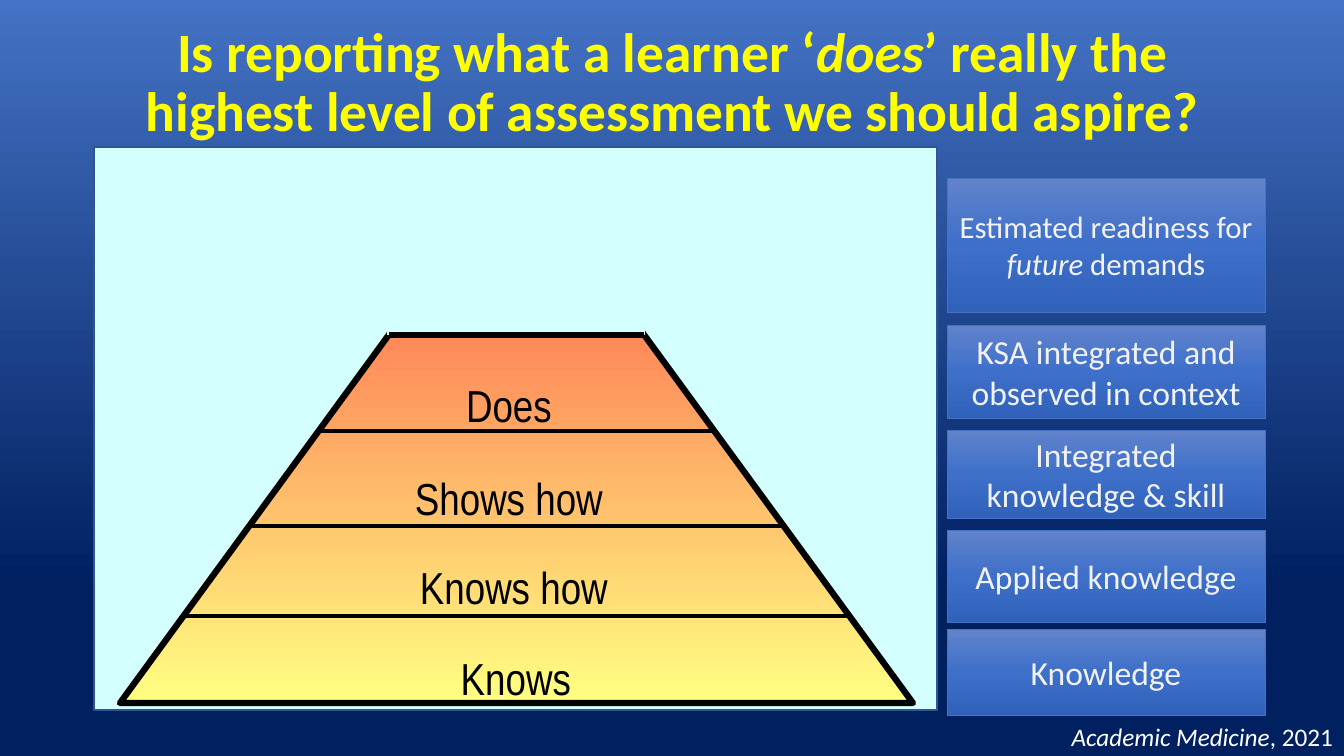
from lxml import etree
from pptx import Presentation
from pptx.dml.color import RGBColor
from pptx.enum.shapes import MSO_CONNECTOR, MSO_SHAPE
from pptx.enum.text import MSO_ANCHOR, MSO_AUTO_SIZE, PP_ALIGN
from pptx.oxml.ns import qn
from pptx.util import Pt

PX = 914400 / 100.8
RECTANGLE, TRIANGLE = MSO_SHAPE.RECTANGLE, MSO_SHAPE.ISOSCELES_TRIANGLE
STRAIGHT = MSO_CONNECTOR.STRAIGHT
TOP, MIDDLE = MSO_ANCHOR.TOP, MSO_ANCHOR.MIDDLE
CENTER, RIGHT = PP_ALIGN.CENTER, PP_ALIGN.RIGHT
NO_AUTOFIT = MSO_AUTO_SIZE.NONE

BLACK = RGBColor(0x00, 0x00, 0x00)
WHITE = RGBColor(0xFF, 0xFF, 0xFF)
OFF_WHITE = RGBColor(0xF2, 0xF2, 0xF2)
YELLOW = RGBColor(0xFF, 0xFF, 0x00)
PALE_CYAN = RGBColor(0xD3, 0xFF, 0xFF)
PANEL_EDGE = RGBColor(0x32, 0x54, 0x91)
BLUE = RGBColor(0x44, 0x72, 0xC4)
NAVY = RGBColor(0x00, 0x20, 0x60)
RED = RGBColor(0xFE, 0x50, 0x47)
LEMON = RGBColor(0xFF, 0xFF, 0x81)

BACKGROUND_STOPS = [(0, BLUE), (78, NAVY)]
PYRAMID_STOPS = [(0, RED), (100, LEMON)]
CARD_STOPS = [(0, RGBColor(0x61, 0x83, 0xCB)), (50, RGBColor(0x3E, 0x70, 0xCA)),
              (100, RGBColor(0x30, 0x62, 0xBB))]

PANEL = (94, 147, 843, 563)
PYRAMID = (120, 160, 793, 543)
CUT_Y = 335
LEVEL_LINES = [431, 526, 616]
# text, centre x, top
LEVELS = [("Does", 509, 370), ("Shows how", 509, 463),
          ("Knows how", 514, 552), ("Knows", 516, 643)]
CARD_LEFT, CARD_WIDTH = 947, 318
# top, height, size, paragraphs of (text, italic) spans
CARDS = [
    (178, 134, 22, [[("Estimated readiness for", False)],
                    [("future ", True), ("demands", False)]]),
    (325, 93, 24, [[("KSA integrated and observed in context", False)]]),
    (430, 88, 24, [[("Integrated", False)], [("knowledge & skill", False)]]),
    (530, 92, 24, [[("Applied knowledge", False)]]),
    (629, 86, 24, [[("Knowledge", False)]]),
]
TITLE = [[("Is reporting what a learner ‘", False), ("does", True),
          ("’ really the highest level of assessment we should aspire?", False)]]
SOURCE = [[("Academic Medicine", True), (", 2021", False)]]


def emu(*lengths):
    return [round(length * PX) for length in lengths]


def fill_gradient(fill, element, stops):
    """Fill from top to bottom; element holds the fill's XML."""
    fill.gradient()
    fill.gradient_angle = 270
    stop_list = next(element.iter(qn("a:gsLst")))
    stop_list.clear()
    for percent, color in stops:
        stop = etree.SubElement(stop_list, qn("a:gs"), pos=str(percent * 1000))
        etree.SubElement(stop, qn("a:srgbClr"), val=str(color))


def add_block(page, kind, place, fill, edge=None, weight=1):
    """Fill is one colour or a list of gradient stops."""
    block = page.shapes.add_shape(kind, *emu(*place))
    block.shadow.inherit = False
    if isinstance(fill, list):
        fill_gradient(block.fill, block.element, fill)
    else:
        block.fill.solid()
        block.fill.fore_color.rgb = fill
    if edge is None:
        block.line.fill.background()
    else:
        block.line.color.rgb = edge
        block.line.width = Pt(weight)
    return block


def add_level_line(page, y, weight):
    """Draw a horizontal line between the two sides of the pyramid."""
    left, top, width, height = PYRAMID
    middle = left + width / 2
    half = (y - top) / height * width / 2
    line = page.shapes.add_connector(STRAIGHT, *emu(middle - half, y, middle + half, y))
    line.line.color.rgb = BLACK
    line.line.width = Pt(weight)
    etree.SubElement(line.element.spPr, qn("a:effectLst"))


def write(frame, paragraphs, size, color, font="Calibri", align=CENTER,
          bold=False, anchor=MIDDLE, wrap=True):
    frame.word_wrap = wrap
    frame.auto_size = NO_AUTOFIT
    frame.vertical_anchor = anchor
    for index, spans in enumerate(paragraphs):
        para = frame.add_paragraph() if index else frame.paragraphs[0]
        para.alignment = align
        for text, italic in spans:
            span = para.add_run()
            span.text = text
            span.font.name = font
            span.font.size = Pt(size)
            span.font.bold = bold
            span.font.italic = italic
            span.font.color.rgb = color


def add_title(page):
    title = page.shapes.title
    title.left, title.top, title.width, title.height = emu(93, 17, 1159, 134)
    write(title.text_frame, TITLE, 39.6, YELLOW, bold=True)
    title.text_frame.paragraphs[0].line_spacing = 0.9


def add_pyramid(page):
    add_block(page, RECTANGLE, PANEL, PALE_CYAN, PANEL_EDGE)
    add_block(page, TRIANGLE, PYRAMID, PYRAMID_STOPS, BLACK, 4.5)
    for y in LEVEL_LINES:
        add_level_line(page, y, 2.25)
    for text, center, top in LEVELS:
        box = page.shapes.add_textbox(*emu(center - 116, top, 232, 56))
        box.text_frame.margin_top = emu(8)[0]
        write(box.text_frame, [[(text, False)]], 32, BLACK, "Arial Narrow",
              anchor=TOP, wrap=False)
    add_block(page, RECTANGLE, (387, 154, 258, CUT_Y - 154), PALE_CYAN)
    add_level_line(page, CUT_Y, 4.5)


def add_cards(page):
    for top, height, size, paragraphs in CARDS:
        card = add_block(page, RECTANGLE, (CARD_LEFT, top, CARD_WIDTH, height),
                         CARD_STOPS, BLUE, 0.5)
        write(card.text_frame, paragraphs, size, OFF_WHITE)


def add_source(page):
    box = page.shapes.add_textbox(*emu(1059, 716, 284, 40))
    write(box.text_frame, SOURCE, 18, WHITE, align=RIGHT, anchor=TOP, wrap=False)


def main():
    deck = Presentation()
    deck.slide_width, deck.slide_height = emu(1344, 756)
    page = deck.slides.add_slide(deck.slide_layouts[5])
    fill_gradient(page.background.fill, page.element, BACKGROUND_STOPS)
    add_title(page)
    add_pyramid(page)
    add_cards(page)
    add_source(page)
    deck.save("out.pptx")


if __name__ == "__main__":
    main()
